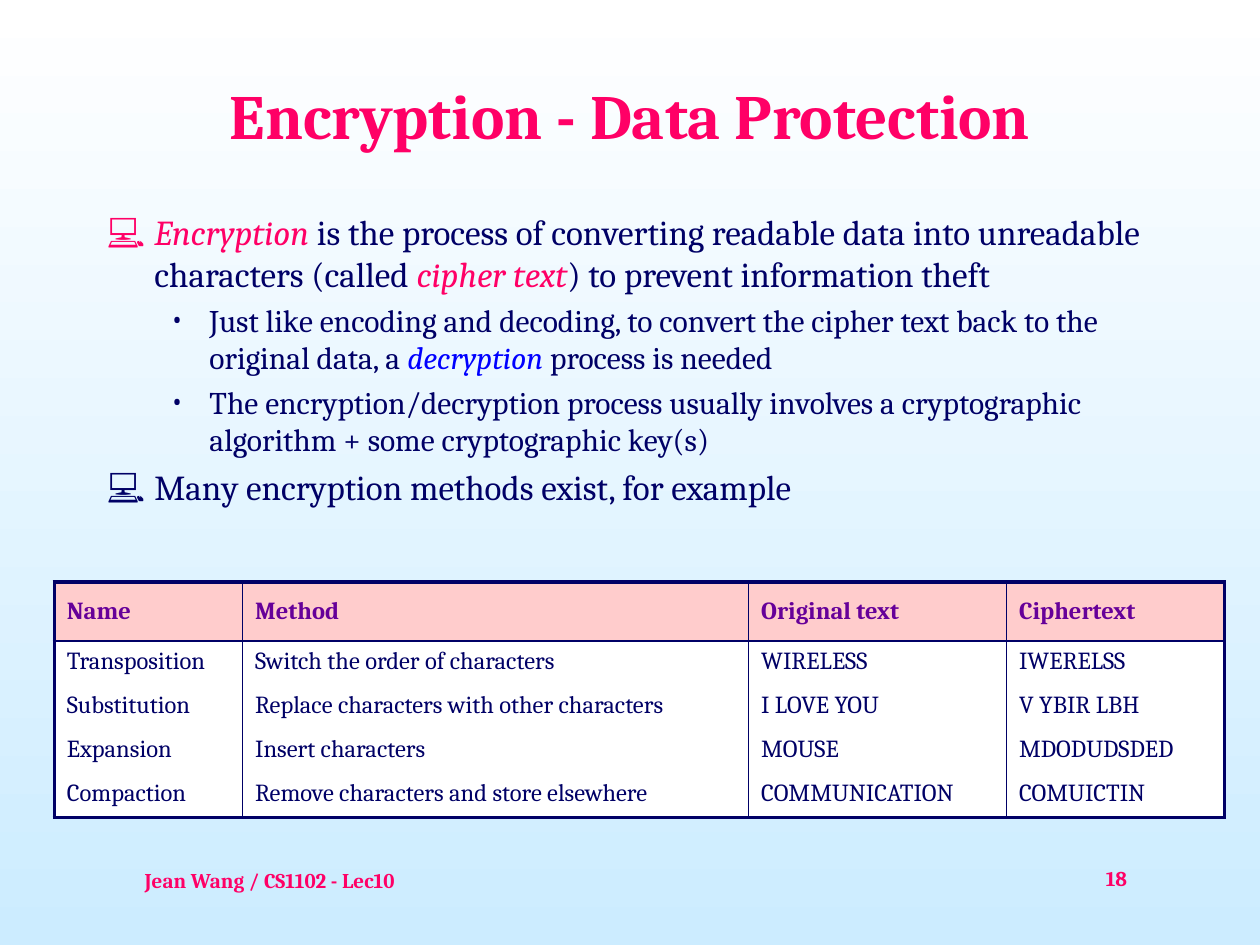
import pptx
import pptx.dml.color
import pptx.enum.text
import pptx.oxml.ns
import pptx.util
from lxml import etree

Pt = pptx.util.Pt
RGBColor = pptx.dml.color.RGBColor
PP_ALIGN = pptx.enum.text.PP_ALIGN
MSO_ANCHOR = pptx.enum.text.MSO_ANCHOR

WHITE = RGBColor(0xFF, 0xFF, 0xFF)
SKY = RGBColor(0xCC, 0xEC, 0xFF)
PINK = RGBColor(0xFF, 0x00, 0x66)
NAVY = RGBColor(0x00, 0x00, 0x66)
BLUE = RGBColor(0x00, 0x00, 0xFF)
PURPLE = RGBColor(0x66, 0x00, 0x99)
ROSE = RGBColor(0xFF, 0xCC, 0xCC)
FONT = "Cambria"

POINTS = [
    (0, [("Encryption", PINK),
         (" is the process of converting readable data into unreadable characters (called ", None),
         ("cipher text", PINK),
         (") to prevent information theft", None)]),
    (1, [("Just like encoding and decoding, to convert the cipher text back to the original data, a ", None),
         ("decryption", BLUE),
         (" process is needed", None)]),
    (1, [("The encryption/decryption process usually involves a cryptographic algorithm"
          " + some cryptographic key(s)", None)]),
    (0, [("Many encryption methods exist, for example", None)]),
]
LEVELS = [
    dict(size=20, left=27, hanging=27, bullet="💻"),
    dict(size=18, left=58.5, hanging=22.5, bullet="•"),
]

METHODS = [
    ("Name", "Method", "Original text", "Ciphertext"),
    ("Transposition", "Switch the order of characters", "WIRELESS", "IWERELSS"),
    ("Substitution", "Replace characters with other characters", "I LOVE YOU", "V YBIR LBH"),
    ("Expansion", "Insert characters", "MOUSE", "MDODUDSDED"),
    ("Compaction", "Remove characters and store elsewhere", "COMMUNICATION", "COMUICTIN"),
]
COLUMN_WIDTHS = [107.6, 289.2, 147.4, 124.6]
HEADER_HEIGHT = 33.6
OUTER, INNER = 2.25, 1


def add_element(parent, tag, **attributes):
    return etree.SubElement(parent, pptx.oxml.ns.qn(tag), attributes)


def style(font, size, color, bold=False):
    font.name = FONT
    font.size = Pt(size)
    font.bold = bold
    font.color.rgb = color


def place(shape, box):
    shape.left, shape.top, shape.width, shape.height = [Pt(length) for length in box]


def paint_background(slide):
    fill = slide.background.fill
    fill.gradient()
    fill.gradient_angle = 270
    for stop, position, color in zip(fill.gradient_stops, (0, 1), (WHITE, SKY)):
        stop.position = position
        stop.color.rgb = color


def fill_title(title, box):
    place(title, box)
    title.text_frame.text = "Encryption - Data Protection"
    title.text_frame.vertical_anchor = MSO_ANCHOR.MIDDLE
    heading = title.text_frame.paragraphs[0]
    heading.alignment = PP_ALIGN.CENTER
    style(heading.font, 36, PINK, bold=True)


def set_bullet(paragraph, level, color):
    properties = paragraph._p.get_or_add_pPr()
    properties.set("marL", str(Pt(level["left"])))
    properties.set("indent", str(-Pt(level["hanging"])))
    bullet_color = add_element(properties, "a:buClr")
    add_element(bullet_color, "a:srgbClr", val=str(color))
    add_element(properties, "a:buFont", typeface=FONT)
    add_element(properties, "a:buChar", char=level["bullet"])


def fill_points(body, box):
    place(body, box)
    frame = body.text_frame
    frame.auto_size = pptx.enum.text.MSO_AUTO_SIZE.NONE
    for index, (depth, pieces) in enumerate(POINTS):
        point = frame.add_paragraph() if index else frame.paragraphs[0]
        point.level = depth
        if index == 0:
            point.space_before = Pt(0)
        set_bullet(point, LEVELS[depth], pieces[0][1] or NAVY)
        style(point.font, LEVELS[depth]["size"], NAVY)
        for words, emphasis in pieces:
            run = point.add_run()
            run.text = words
            if emphasis:
                run.font.italic = True
                run.font.color.rgb = emphasis


def set_borders(cell, widths):
    properties = cell._tc.get_or_add_tcPr()
    for index, (tag, width) in enumerate(zip(("a:lnL", "a:lnR", "a:lnT", "a:lnB"), widths)):
        line = etree.Element(pptx.oxml.ns.qn(tag), w=str(Pt(width)))
        if width:
            add_element(add_element(line, "a:solidFill"), "a:srgbClr", val=str(NAVY))
        else:
            add_element(line, "a:noFill")
        properties.insert(index, line)


def add_methods_table(slide, box):
    table = slide.shapes.add_table(
        len(METHODS), len(COLUMN_WIDTHS), *[Pt(length) for length in box]).table
    table.first_row = True
    table.horz_banding = False
    for column, width in zip(table.columns, COLUMN_WIDTHS):
        column.width = Pt(width)
    last_row, last_column = len(METHODS) - 1, len(COLUMN_WIDTHS) - 1
    method_height = (box[3] - HEADER_HEIGHT) / last_row
    for r, entries in enumerate(METHODS):
        header = r == 0
        table.rows[r].height = Pt(HEADER_HEIGHT if header else method_height)
        for c, entry in enumerate(entries):
            cell = table.cell(r, c)
            cell.text = entry
            cell.vertical_anchor = MSO_ANCHOR.MIDDLE if header else MSO_ANCHOR.TOP
            cell.fill.solid()
            cell.fill.fore_color.rgb = ROSE if header else WHITE
            style(cell.text_frame.paragraphs[0].font, 14, PURPLE if header else NAVY, bold=header)
            set_borders(cell, (
                OUTER if c == 0 else INNER,
                OUTER if c == last_column else INNER,
                OUTER if header else INNER if r == 1 else 0,
                OUTER if r == last_row else INNER if header else 0))


def add_footer(slide, box, words, alignment):
    footer = slide.shapes.add_textbox(*[Pt(length) for length in box])
    footer.text_frame.word_wrap = True
    footer.text_frame.text = words
    line = footer.text_frame.paragraphs[0]
    line.alignment = alignment
    style(line.font, 12, PINK, bold=True)


def main():
    deck = pptx.Presentation()
    deck.slide_width, deck.slide_height = Pt(720), Pt(540)
    slide = deck.slides.add_slide(deck.slide_layouts[1])
    paint_background(slide)
    fill_title(slide.shapes.title, (54, 20.2, 612, 90))
    fill_points(slide.placeholders[1], (54, 116.6, 612, 368.6))
    add_methods_table(slide, (31, 332.6, sum(COLUMN_WIDTHS), 134.4))
    add_footer(slide, (75.6, 492, 244.8, 36), "Jean Wang / CS1102 - Lec10", PP_ALIGN.LEFT)
    add_footer(slide, (563, 491, 150, 36), "18", PP_ALIGN.CENTER)
    deck.save("out.pptx")


if __name__ == "__main__":
    main()
